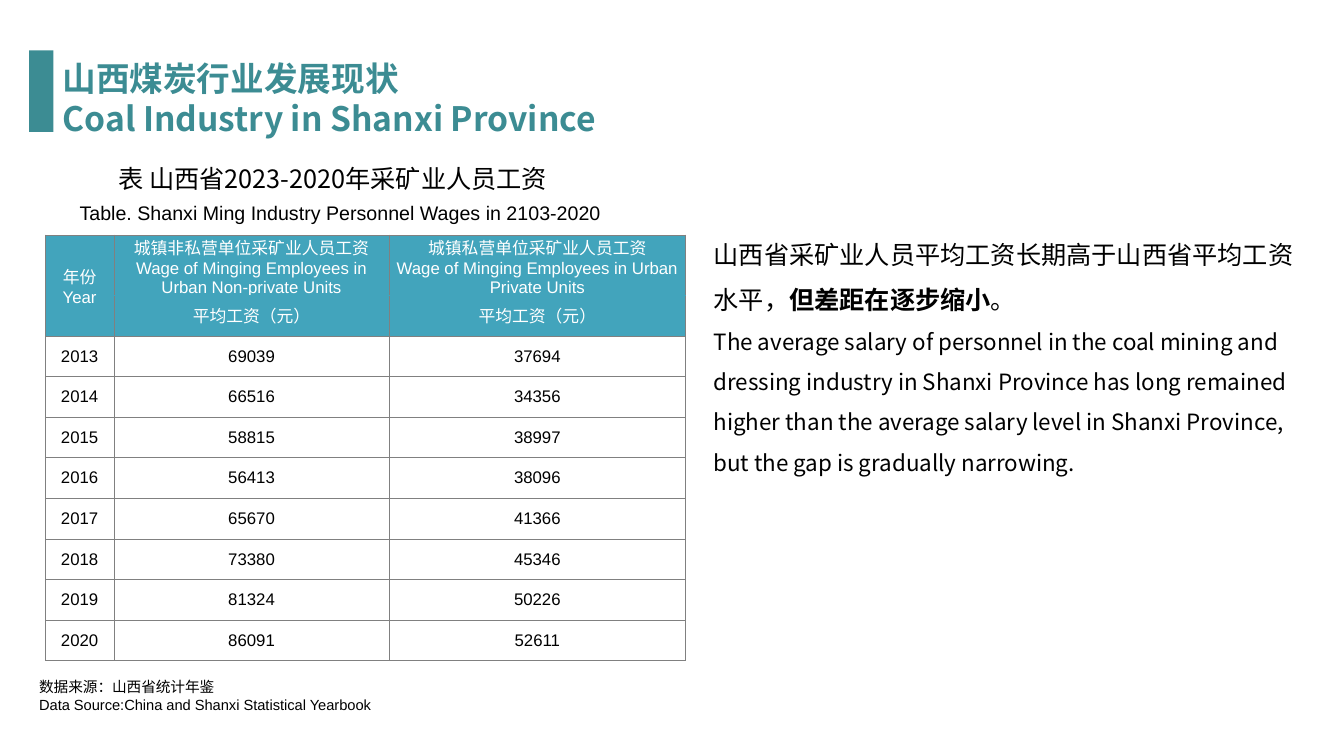
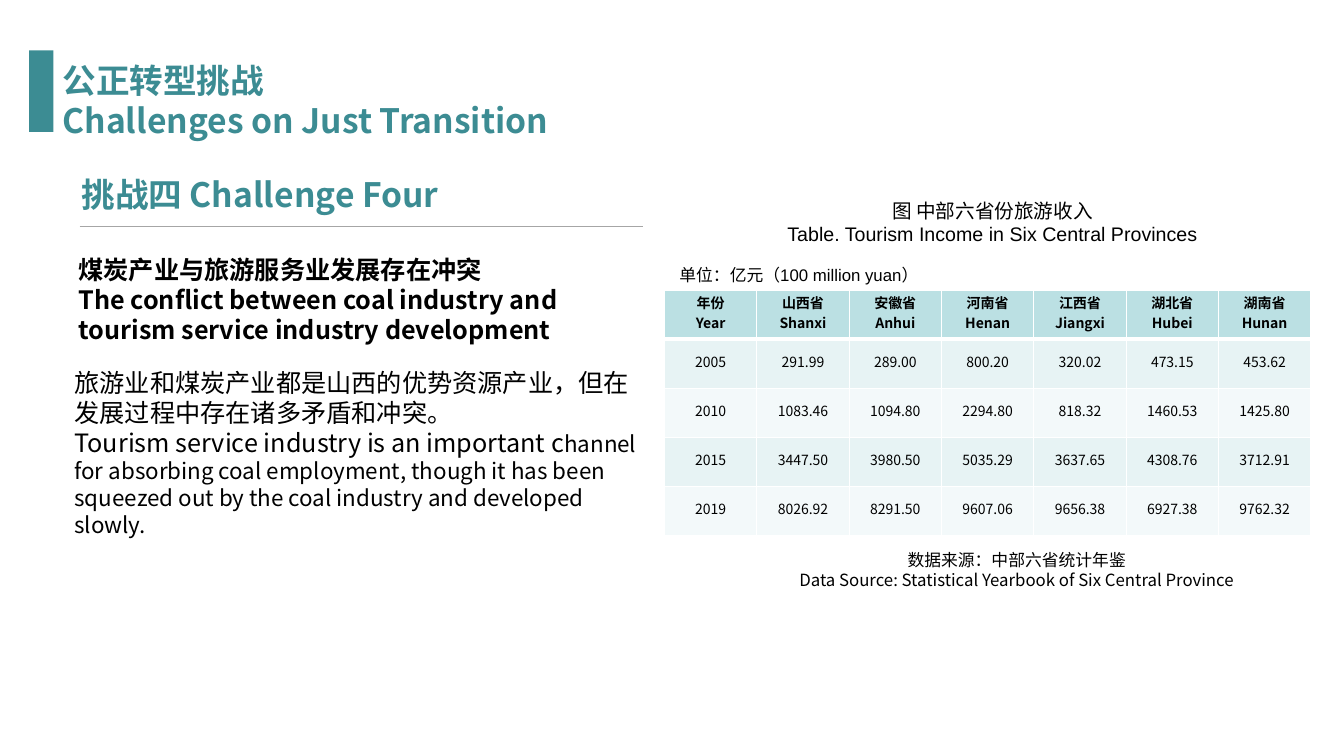
from lxml.etree import SubElement
from pptx import Presentation
from pptx.dml.color import RGBColor
from pptx.enum.shapes import MSO_CONNECTOR, MSO_SHAPE
from pptx.enum.text import MSO_ANCHOR, PP_ALIGN
from pptx.oxml.ns import qn
from pptx.util import Inches, Pt

HUES = {"teal": "3C8C93", "blue": "42A4BC", "grey": "808080", "rule": "A6A6A6",
        "head": "BBE0E3", "odd": "E7F3F4", "even": "F3F9FA",
        "white": "FFFFFF", "black": "000000"}
NOTO, ARIAL = "Noto Sans CJK SC", "Arial"

WAGES = [
    ["年份\nYear",
     "城镇非私营单位采矿业人员工资\nWage of Minging Employees in Urban Non-private Units",
     "城镇私营单位采矿业人员工资\nWage of Minging Employees in Urban Private Units"],
    ["", "平均工资（元）", "平均工资（元）"],
    ["2013", "69039", "37694"],
    ["2014", "66516", "34356"],
    ["2015", "58815", "38997"],
    ["2016", "56413", "38096"],
    ["2017", "65670", "41366"],
    ["2018", "73380", "45346"],
    ["2019", "81324", "50226"],
    ["2020", "86091", "52611"],
]
TOURISM = [
    ["年份\nYear", "山西省\nShanxi", "安徽省\nAnhui", "河南省\nHenan",
     "江西省\nJiangxi", "湖北省\nHubei", "湖南省\nHunan"],
    ["2005", "291.99", "289.00", "800.20", "320.02", "473.15", "453.62"],
    ["2010", "1083.46", "1094.80", "2294.80", "818.32", "1460.53", "1425.80"],
    ["2015", "3447.50", "3980.50", "5035.29", "3637.65", "4308.76", "3712.91"],
    ["2019", "8026.92", "8291.50", "9607.06", "9656.38", "6927.38", "9762.32"],
]
SLIDES = [
    {"title": ["山西煤炭行业发展现状", "Coal Industry in Shanxi Province"],
     "top": 0.6,
     "texts": [
         {"box": (6.98, 2.17, 6, 2.62), "gap": 1.5, "lines": [
             ([("山西省采矿业人员平均工资长期高于山西省平均工资水平，", {}),
               ("但差距在逐步缩小", {"bold": True}), ("。", {})], 18, NOTO),
             ("The average salary of personnel in the coal mining and dressing industry in Shanxi Province has long remained higher than the average salary level in Shanxi Province, but the gap is gradually narrowing.", 16, NOTO)]},
         {"box": (0.52, 1.57, 5.56, 0.4), "mid": True, "lines": [
             ("表 山西省2023-2020年采矿业人员工资", 18, NOTO)]},
         {"box": (0.69, 1.94, 5.81, 0.34), "lines": [
             ("Table. Shanxi Ming Industry Personnel Wages in 2103-2020", 14, ARIAL)]},
         {"box": (0.29, 6.68, 5.56, 0.45), "lines": [
             ("数据来源：山西省统计年鉴", 10.5, ARIAL),
             ("Data Source:China and Shanxi Statistical Yearbook", 10.5, ARIAL)]},
     ]},
    {"title": ["公正转型挑战", "Challenges on Just Transition"],
     "top": 0.62,
     "texts": [
         {"box": (0.71, 1.68, 4.44, 0.5), "hue": "teal", "bold": True, "lines": [
             ("挑战四 Challenge Four", 24, NOTO)]},
         {"box": (0.68, 2.32, 5.88, 1.16), "bold": True, "gap": (1.5, 1), "lines": [
             ("煤炭产业与旅游服务业发展存在冲突", 18, NOTO),
             ("The conflict between coal industry and tourism service industry development", 18, NOTO)]},
         {"box": (0.64, 3.59, 5.92, 1.82), "lines": [
             ("旅游业和煤炭产业都是山西的优势资源产业，但在发展过程中存在诸多矛盾和冲突。", 18, NOTO),
             ([("Tourism service industry is an important c", {"size": Pt(18)}),
               ("hannel for absorbing coal employment, though it has been squeezed out by the coal industry and developed slowly.", {})], 16, NOTO)]},
         {"box": (6.51, 1.92, 6.67, 0.64), "mid": True, "lines": [
             ("图 中部六省份旅游收入", 14, NOTO),
             ("Table. Tourism Income in Six Central Provinces", 14, ARIAL)]},
         {"box": (6.64, 2.58, 2.72, 0.3), "lines": [
             ("单位：亿元（100 million yuan）", 12, ARIAL)]},
         {"box": (6.75, 5.4, 6.67, 0.5), "mid": True, "lines": [
             ("数据来源：中部六省统计年鉴", 12, NOTO),
             ("Data Source: Statistical Yearbook of Six Central Province", 12, NOTO)]},
     ]},
]


def tint(name):
    return RGBColor.from_string(HUES[name])


def style(par, size, face, hue="black", bold=False, mid=False):
    font = par.font
    font.size, font.name, font.bold = Pt(size), face, bold
    font.color.rgb = tint(hue)
    par.alignment = PP_ALIGN.CENTER if mid else PP_ALIGN.LEFT
    for run in par.runs:
        props = run._r.get_or_add_rPr()
        SubElement(props, qn("a:latin"), typeface=face)
        SubElement(props, qn("a:ea"), typeface=NOTO)


def write(frame, lines, gap=1, **look):
    frame.word_wrap = True
    gaps = gap if isinstance(gap, tuple) else [gap] * len(lines)
    for num, ((text, size, face), space) in enumerate(zip(lines, gaps)):
        par = frame.add_paragraph() if num else frame.paragraphs[0]
        for words, extra in [(text, {})] if isinstance(text, str) else text:
            run = par.add_run()
            run.text = words
            for key, val in extra.items():
                setattr(run.font, key, val)
        style(par, size, face, **look)
        if space != 1:
            par.line_spacing = space


def place(shape, box):
    shape.left, shape.top, shape.width, shape.height = map(Inches, box)


def start(deck, data):
    slide = deck.slides.add_slide(deck.slide_layouts[5])
    title = slide.shapes.title
    place(title, (0.52, data["top"], 12.11, 0.75))
    title.text_frame.vertical_anchor = MSO_ANCHOR.MIDDLE
    write(title.text_frame, [(line, 24, NOTO) for line in data["title"]],
          hue="teal", bold=True)
    bar = slide.shapes.add_shape(MSO_SHAPE.RECTANGLE, 0, 0, 0, 0)
    place(bar, (0.29, 0.5, 0.24, 0.81))
    bar.shadow.inherit = False
    bar.fill.solid()
    bar.fill.fore_color.rgb = tint("teal")
    bar.line.fill.background()
    for item in data["texts"]:
        look = dict(item)
        box = slide.shapes.add_textbox(*map(Inches, look.pop("box")))
        write(box.text_frame, **look)
    return slide


def edge(cell, sides):
    props = cell._tc.get_or_add_tcPr()
    for num, (tag, (hue, wide)) in enumerate(sides.items()):
        line = SubElement(props, qn("a:" + tag), w=str(Pt(wide)))
        fill = SubElement(line, qn("a:solidFill"))
        SubElement(fill, qn("a:srgbClr"), val=HUES[hue])
        props.remove(line)
        props.insert(num, line)


def grid(slide, rows, spot, wide, high, pads, look, sides):
    shape = slide.shapes.add_table(len(rows), len(wide), *map(Inches, spot),
                                   Inches(sum(wide)), Inches(sum(high)))
    table = shape.table
    for col, size in zip(table.columns, wide):
        col.width = Inches(size)
    for row, size in zip(table.rows, high):
        row.height = Inches(size)
    for r, row in enumerate(rows):
        for c, text in enumerate(row):
            cell = table.cell(r, c)
            (cell.margin_left, cell.margin_top,
             cell.margin_right, cell.margin_bottom) = map(Inches, pads)
            cell.vertical_anchor = MSO_ANCHOR.MIDDLE
            fill, size, face, hue, bold = look(r)
            cell.fill.solid()
            cell.fill.fore_color.rgb = tint(fill)
            edge(cell, sides(r))
            write(cell.text_frame, [(line, size, face) for line in text.split("\n")],
                  hue=hue, bold=bold, mid=True)
    return table


def wage_look(r):
    return ("blue" if r < 2 else "white", 12, ARIAL,
            "white" if r < 2 else "black", False)


def trip_look(r):
    return ("head" if r == 0 else "odd" if r % 2 else "even",
            10, NOTO, "black", r == 0)


def wage_edge(r):
    sides = dict.fromkeys(("lnL", "lnR", "lnT", "lnB"), ("grey", 0.5))
    if r == 0:
        sides["lnB"] = ("blue", 0.5)
    if r == 1:
        sides["lnT"] = ("blue", 0.5)
    return sides


def trip_edge(r):
    sides = dict.fromkeys(("lnL", "lnR", "lnT", "lnB"), ("white", 1))
    if r < 2:
        sides["lnT" if r else "lnB"] = ("white", 3)
    return sides


def main():
    deck = Presentation()
    deck.slide_width, deck.slide_height = Inches(13.33), Inches(7.5)
    coal, trip = [start(deck, data) for data in SLIDES]

    table = grid(coal, WAGES, (0.45, 2.33), [0.68, 2.73, 2.94],
                 [0.6] + [0.403] * 9, (0.07, 0, 0.07, 0), wage_look, wage_edge)
    table.cell(0, 0).merge(table.cell(1, 0))

    grid(trip, TOURISM, (6.59, 2.88), [0.916] * 7, [0.486] * 5,
         (0.01, 0.01, 0.01, 0.05), trip_look, trip_edge)
    rule = trip.shapes.add_connector(MSO_CONNECTOR.STRAIGHT, Inches(0.79),
                                     Inches(2.25), Inches(6.38), Inches(2.25))
    rule.line.color.rgb = tint("rule")
    rule.line.width = Pt(0.5)
    SubElement(rule._element.spPr, qn("a:effectLst"))
    deck.save("out.pptx")


if __name__ == "__main__":
    main()
